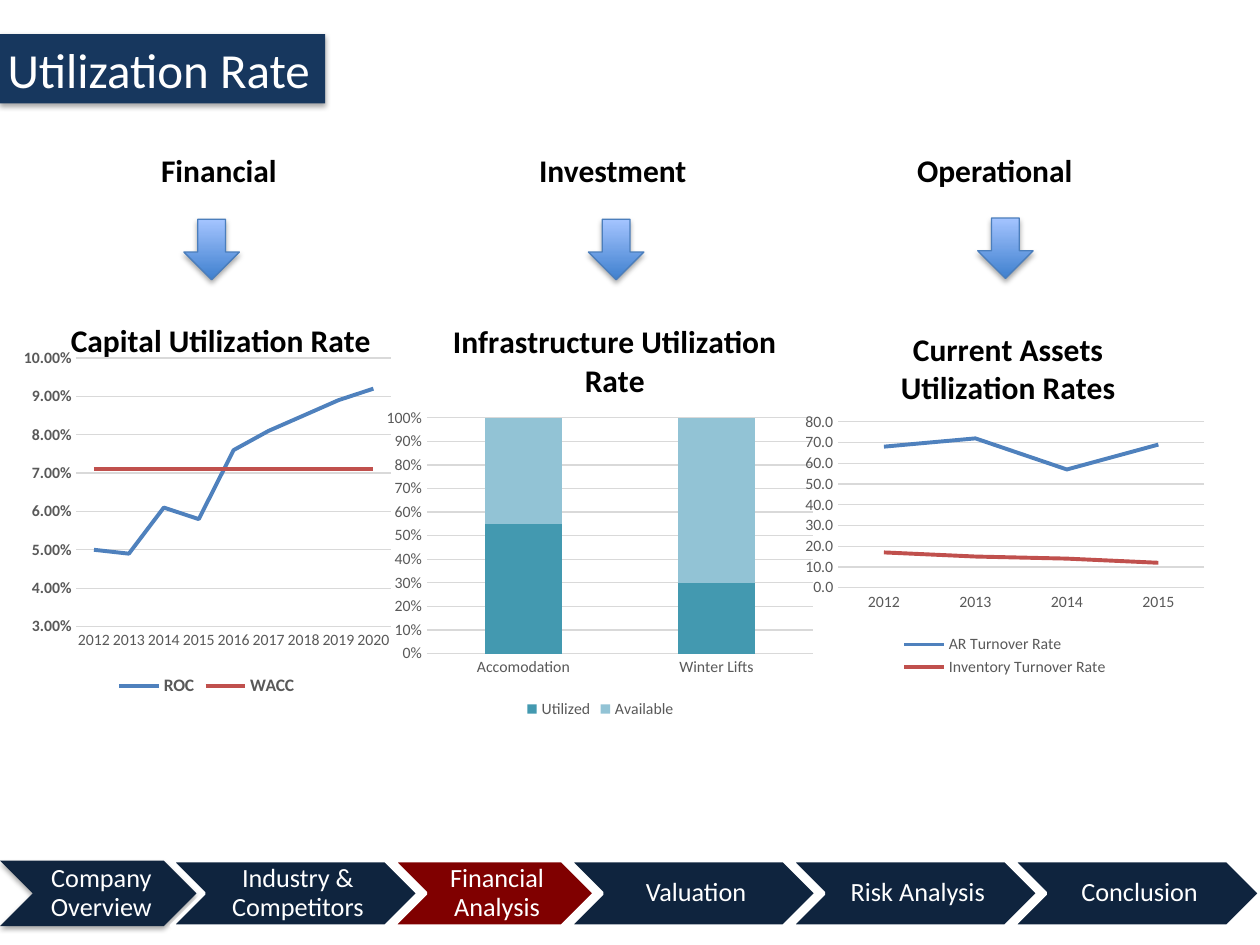
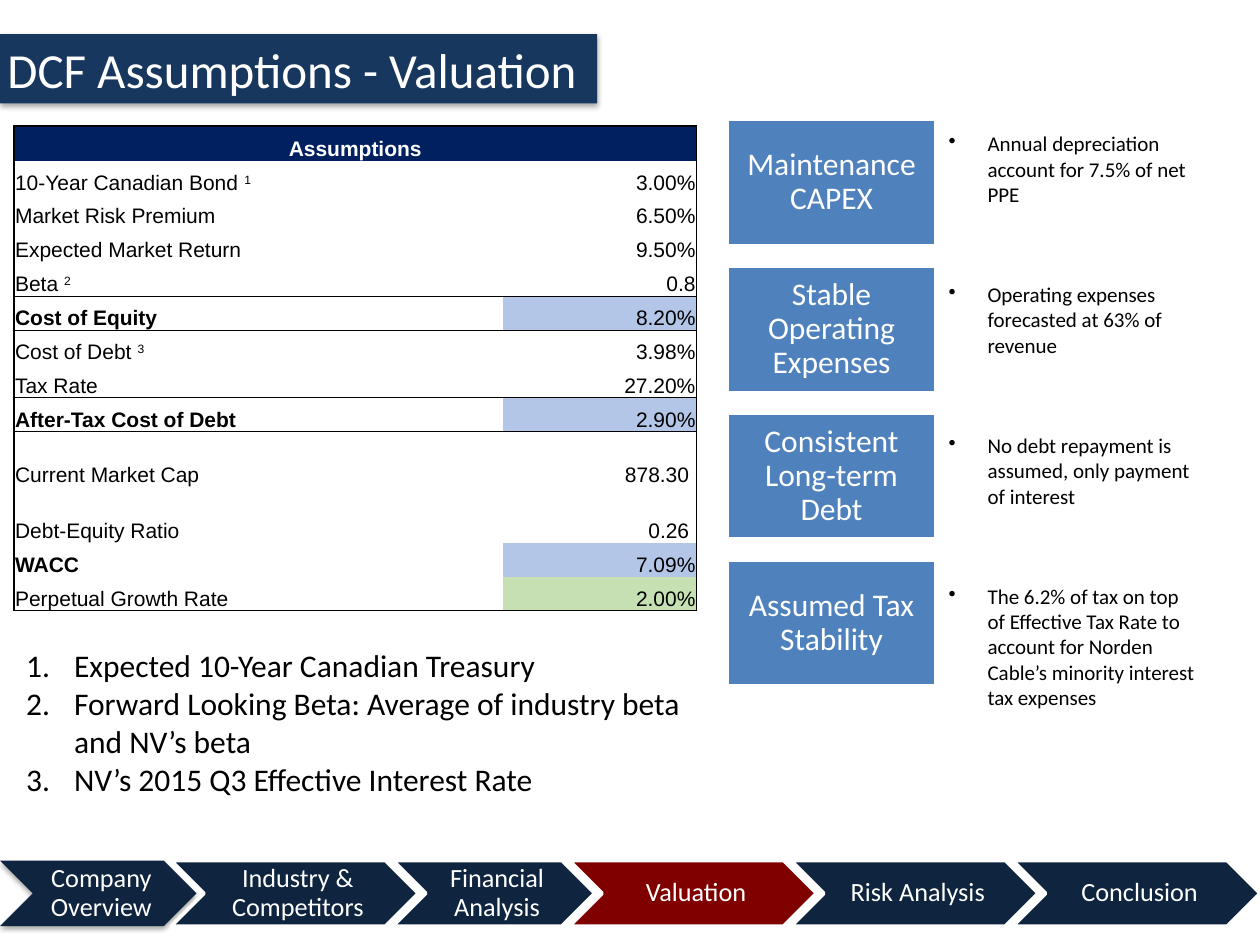
from dataclasses import dataclass

from lxml import etree
from pptx import Presentation
from pptx.chart.data import CategoryChartData
from pptx.dml.color import RGBColor
from pptx.enum.chart import XL_CHART_TYPE, XL_LEGEND_POSITION, XL_TICK_MARK
from pptx.enum.shapes import MSO_SHAPE
from pptx.enum.text import MSO_ANCHOR, PP_ALIGN
from pptx.oxml import parse_xml
from pptx.oxml.ns import nsdecls, qn
from pptx.util import Inches, Pt

LINE, STACKED = XL_CHART_TYPE.LINE, XL_CHART_TYPE.COLUMN_STACKED
BOTTOM, NO_TICK = XL_LEGEND_POSITION.BOTTOM, XL_TICK_MARK.NONE
RECT, CHEVRON, DOWN_ARROW = MSO_SHAPE.RECTANGLE, MSO_SHAPE.CHEVRON, MSO_SHAPE.DOWN_ARROW
MIDDLE, LOW = MSO_ANCHOR.MIDDLE, MSO_ANCHOR.BOTTOM
LEFT, CENTER, RIGHT = PP_ALIGN.LEFT, PP_ALIGN.CENTER, PP_ALIGN.RIGHT
WHITE, BLACK, GREY, GRID = "FFFFFF", "000000", "595959", "D9D9D9"
TITLE_BLUE, NAVY, MAROON, BLUE, RED = "17375E", "0F243E", "800000", "4F81BD", "C0504D"
HEADER_BLUE, RESULT_BLUE, GROWTH_GREEN = "002060", "B4C6E7", "C6E0B4"
NO_TABLE_STYLE = "{2D5ABB26-0587-4C30-8999-92F81FD0307C}"
STEPS = [("Company Overview", 1.56), ("Industry & Competitors", 1.96),
         ("Financial Analysis", 1.6), ("Valuation", 1.96),
         ("Risk Analysis", 1.96), ("Conclusion", 1.96)]


@dataclass
class Series:
    name: str
    values: list[float]
    color: str


@dataclass
class Panel:
    heading: str
    arrow: tuple[float, float]
    title: str
    title_at: tuple[float, float]
    kind: int
    box: tuple[float, float, float, float]
    plot: tuple[float, float, float, float]
    categories: list[str]
    series: list[Series]
    scale: tuple[float, float, float]
    number_format: str
    bold: bool = False
    legend_size: int = 9
    legend_at: tuple[float, ...] = ()


@dataclass
class Assumption:
    label: str
    value: str
    note: str = ""
    height: float = 0.27
    fill: str = WHITE
    bold: bool = False
    ruled: bool = False
    right_inset: float = 0.01


def rgb(color: str) -> RGBColor:
    return RGBColor.from_string(color)


def set_font(font, size: float, color: str, bold: bool = False, name: str = "Calibri") -> None:
    font.name, font.size, font.bold = name, Pt(size), bold
    font.color.rgb = rgb(color)


def set_insets(frame, left: float, top: float, right: float, bottom: float) -> None:
    frame.margin_left, frame.margin_top = Inches(left), Inches(top)
    frame.margin_right, frame.margin_bottom = Inches(right), Inches(bottom)


def add_shape(slide, kind: int, box: tuple, fill: str = "", line: str = "", width: float = 2):
    sp = slide.shapes.add_shape(kind, *map(Inches, box))
    sp.shadow.inherit = False
    if fill:
        sp.fill.solid()
        sp.fill.fore_color.rgb = rgb(fill)
    if line:
        sp.line.color.rgb = rgb(line)
        sp.line.width = Pt(width)
    else:
        sp.line.fill.background()
    return sp


def cast_shadow(sp) -> None:
    effects = sp._element.spPr.find(qn("a:effectLst"))
    effects.append(parse_xml(
        f'<a:outerShdw {nsdecls("a")} blurRad="{Pt(3.1)}" dist="{Pt(1.8)}" dir="5400000" '
        'rotWithShape="0"><a:srgbClr val="000000"><a:alpha val="35000"/></a:srgbClr></a:outerShdw>'))


def label_shape(sp, text: str, size: float, insets: tuple) -> None:
    tf = sp.text_frame
    tf.word_wrap, tf.vertical_anchor = True, MIDDLE
    set_insets(tf, *insets)
    p = tf.paragraphs[0]
    p.text, p.alignment, p.line_spacing = text, CENTER, 0.9
    set_font(p.font, size, WHITE)


def add_text(slide, box: tuple, lines: list[str], size: float, bold: bool = False,
             bullet: str = "", indent: float = 0, gap: float = 0) -> None:
    tf = slide.shapes.add_textbox(*map(Inches, box)).text_frame
    tf.word_wrap = True
    for i, line in enumerate(lines):
        p = tf.add_paragraph() if i else tf.paragraphs[0]
        p.text, p.space_after = line, Pt(gap)
        set_font(p.font, size, BLACK, bold)
        if bullet:
            pPr = p._p.get_or_add_pPr()
            pPr.set("marL", str(Inches(indent)))
            pPr.set("indent", str(-Inches(indent)))
            mark = parse_xml(f'<a:{bullet} {nsdecls("a")}/>')
            mark.set(*(("char", "•") if bullet == "buChar" else ("type", "arabicPeriod")))
            pPr.insert_element_before(mark, "a:tabLst", "a:defRPr", "a:extLst")


def add_frame(prs, title: str, title_width: float, active: str):
    slide = prs.slides.add_slide(prs.slide_layouts[6])
    bar = add_shape(slide, RECT, (0, 0.27, title_width, 0.55), TITLE_BLUE)
    cast_shadow(bar)
    tf = bar.text_frame
    tf.word_wrap, tf.vertical_anchor = False, MIDDLE
    set_insets(tf, 0.06, 0, 0, 0)
    p = tf.paragraphs[0]
    p.text, p.alignment = title, LEFT
    set_font(p.font, 28, WHITE)
    left = 0.0
    for i, (name, width) in enumerate(STEPS):
        sp = add_shape(slide, CHEVRON, (left, 6.83, width, 0.52),
                       MAROON if name == active else NAVY, WHITE if i else "")
        if not i:
            cast_shadow(sp)
        label_shape(sp, name, 15, (0.07, 0.02, 0.02, 0.02))
        left += width - 0.2
    return slide


def place(element, after: str, position: tuple, inner: bool = False) -> None:
    for old in element.findall(qn("c:layout")):
        element.remove(old)
    layout = parse_xml(f'<c:layout {nsdecls("c")}><c:manualLayout/></c:layout>')
    settings = [("layoutTarget", "inner")] if inner else []
    settings += [("xMode", "edge"), ("yMode", "edge")] + list(zip("xywh", position))
    for tag, value in settings:
        etree.SubElement(layout[0], qn(f"c:{tag}")).set("val", str(value))
    if after:
        element.find(qn(after)).addnext(layout)
    else:
        element.insert(0, layout)


def add_panel_chart(slide, panel: Panel) -> None:
    data = CategoryChartData(number_format=panel.number_format)
    data.categories = panel.categories
    for s in panel.series:
        data.add_series(s.name, s.values)
    chart = slide.shapes.add_chart(panel.kind, *map(Inches, panel.box), data).chart
    set_font(chart.font, 10, BLACK)
    chart.has_title = True
    tf = chart.chart_title.text_frame
    tf.text = panel.title
    for p in tf.paragraphs:
        set_font(p.font, 18, BLACK, True)
    place(chart.chart_title._element, "c:tx", panel.title_at)
    place(chart._chartSpace.chart.plotArea, "", panel.plot, True)
    chart.has_legend = True
    legend = chart.legend
    legend.position, legend.include_in_layout = BOTTOM, False
    set_font(legend.font, panel.legend_size, GREY, panel.bold)
    if panel.legend_at:
        place(legend._element, "c:legendPos", panel.legend_at)
    cat, val = chart.category_axis, chart.value_axis
    for axis in (cat, val):
        axis.major_tick_mark = axis.minor_tick_mark = NO_TICK
    set_font(cat.tick_labels.font, 9, GREY)
    set_font(val.tick_labels.font, 9, GREY, panel.bold)
    val.minimum_scale, val.maximum_scale, val.major_unit = panel.scale
    val.tick_labels.number_format = panel.number_format
    val.tick_labels.number_format_is_linked = False
    val.format.line.fill.background()
    for line in (cat.format.line, val.major_gridlines.format.line):
        line.color.rgb, line.width = rgb(GRID), Pt(0.75)
    plot = chart.plots[0]
    plot.vary_by_categories = False
    if panel.kind == STACKED:
        plot.gap_width, plot.overlap = 150, 100
    for ser, s in zip(plot.series, panel.series):
        if panel.kind == STACKED:
            ser.format.fill.solid()
            ser.format.fill.fore_color.rgb = rgb(s.color)
        else:
            ser.smooth = False
            ser.format.line.color.rgb, ser.format.line.width = rgb(s.color), Pt(2.25)


def add_panel(slide, index: int, panel: Panel) -> None:
    add_text(slide, (1.18 + 3 * index, 1.15, 2.02, 0.4), [panel.heading], 18, True)
    arrow = add_shape(slide, DOWN_ARROW, (*panel.arrow, 0.44, 0.48), line="4B7EBC", width=0.75)
    arrow.fill.gradient()
    arrow.fill.gradient_angle = 90
    for stop, color in zip(arrow.fill.gradient_stops, ("3F80CE", "A4C4FF")):
        stop.color.rgb = rgb(color)
    cast_shadow(arrow)
    add_panel_chart(slide, panel)


def style_cell(cell, text: str, fill: str, align: int, borders: dict[str, float], color: str = BLACK,
               bold: bool = False, note: str = "", right_inset: float = 0.01) -> None:
    tcPr = cell._tc.get_or_add_tcPr()
    for side in "LRTB":
        if side in borders:
            tcPr.append(parse_xml(
                f'<a:ln{side} {nsdecls("a")} w="{Pt(borders[side])}"><a:solidFill>'
                f'<a:srgbClr val="{BLACK}"/></a:solidFill></a:ln{side}>'))
    cell.fill.solid()
    cell.fill.fore_color.rgb = rgb(fill)
    cell.vertical_anchor = LOW
    set_insets(cell, 0.01, 0.01, right_inset, 0)
    p = cell.text_frame.paragraphs[0]
    p.text, p.alignment = text, align
    set_font(p.font, 12, color, bold, "Arial")
    if note:
        r = p.add_run()
        r.text = note
        r._r.get_or_add_rPr().set("baseline", "30000")


def add_assumptions(slide, rows: list[Assumption]) -> None:
    table = slide.shapes.add_table(len(rows) + 1, 2, *map(Inches, (0.11, 1, 5.42, 3.86))).table
    table._tbl.tblPr.find(qn("a:tableStyleId")).text = NO_TABLE_STYLE
    table.first_row = table.horz_banding = False
    for column, width in zip(table.columns, (3.88, 1.54)):
        column.width = Inches(width)
    table.rows[0].height = Inches(0.28)
    table.cell(0, 0).merge(table.cell(0, 1))
    for c, text in enumerate(("Assumptions", "")):
        style_cell(table.cell(0, c), text, HEADER_BLUE, CENTER,
                   {"L": 1, "R": 1, "T": 1}, WHITE, True)
    for i, row in enumerate(rows, 1):
        table.rows[i].height = Inches(row.height)
        edges = {"B": 1} if i == len(rows) else {"B": 0.5} if row.ruled else {}
        if i > 1 and rows[i - 2].ruled:
            edges["T"] = 0.5
        style_cell(table.cell(i, 0), row.label, WHITE, LEFT, {"L": 1, **edges},
                   bold=row.bold, note=row.note)
        style_cell(table.cell(i, 1), row.value, row.fill, RIGHT, {"R": 1, **edges},
                   right_inset=row.right_inset)


PANELS = [
    Panel("Financial", (1.46, 1.74), "Capital Utilization Rate", (0.14, 0.05), LINE,
          (0.08, 2.32, 3.12, 3.24), (0.169, 0.161, 0.8, 0.658),
          [str(year) for year in range(2012, 2021)],
          [Series("ROC", [0.05, 0.049, 0.061, 0.058, 0.076, 0.081, 0.085, 0.089, 0.092], BLUE),
           Series("WACC", [0.071] * 9, RED)],
          (0.03, 0.1, 0.01), "0.00%", True, 10),
    Panel("Investment", (4.67, 1.74), "Infrastructure Utilization\nRate", (0.16, 0.05), STACKED,
          (3, 2.35, 3.53, 3.39), (0.11, 0.285, 0.868, 0.552), ["Accomodation", "Winter Lifts"],
          [Series("Utilized", [0.55, 0.3], "4399B0"), Series("Available", [0.45, 0.7], "92C3D5")],
          (0, 1, 0.1), "0%"),
    Panel("Operational", (7.76, 1.73), "Current Assets\nUtilization Rates", (0.24, 0.06), LINE,
          (6.33, 2.4, 3.29, 3), (0.098, 0.316, 0.883, 0.439),
          [str(year) for year in range(2012, 2016)],
          [Series("AR Turnover Rate", [68, 72, 57, 69], BLUE),
           Series("Inventory Turnover Rate", [17, 15, 14, 12], RED)],
          (0, 80, 10), "#,##0.0", legend_at=(0.24, 0.87, 0.52, 0.13)),
]
ASSUMPTIONS = [
    Assumption("10-Year Canadian Bond ", "3.00%", "1"),
    Assumption("Market Risk Premium", "6.50%", height=0.26),
    Assumption("Expected Market Return", "9.50%"),
    Assumption("Beta ", "0.8", "2", ruled=True),
    Assumption("Cost of Equity", "8.20%", fill=RESULT_BLUE, bold=True),
    Assumption("Cost of Debt ", "3.98%", "3"),
    Assumption("Tax Rate", "27.20%", ruled=True),
    Assumption("After-Tax Cost of Debt", "2.90%", fill=RESULT_BLUE, bold=True),
    Assumption("Current Market Cap", "878.30", height=0.44, right_inset=0.06),
    Assumption("Debt-Equity Ratio", "0.26", height=0.44, right_inset=0.06),
    Assumption("WACC", "7.09%", fill=RESULT_BLUE, bold=True),
    Assumption("Perpetual Growth Rate", "2.00%", fill=GROWTH_GREEN),
]
FOOTNOTES = ["Expected 10-Year Canadian Treasury",
             "Forward Looking Beta: Average of industry beta and NV’s beta",
             "NV’s 2015 Q3 Effective Interest Rate"]
DRIVERS = {
    "Maintenance CAPEX": "Annual depreciation account for 7.5% of net PPE",
    "Stable Operating Expenses": "Operating expenses forecasted at 63% of revenue",
    "Consistent Long-term Debt": "No debt repayment is assumed, only payment of interest",
    "Assumed Tax Stability": "The 6.2% of tax on top of Effective Tax Rate to account for "
                             "Norden Cable’s minority interest tax expenses",
}


def main() -> None:
    prs = Presentation()
    prs.slide_width, prs.slide_height = Inches(10), Inches(7.5)

    slide = add_frame(prs, "Utilization Rate", 2.58, "Financial Analysis")
    for i, panel in enumerate(PANELS):
        add_panel(slide, i, panel)

    slide = add_frame(prs, "DCF Assumptions - Valuation", 4.74, "Valuation")
    add_assumptions(slide, ASSUMPTIONS)
    add_text(slide, (0.11, 5.08, 5.42, 1.31), FOOTNOTES, 18, bullet="buAutoNum", indent=0.38)
    for i, driver in enumerate(DRIVERS):
        sp = add_shape(slide, RECT, (5.77, 0.95 + 1.165 * i, 1.66, 1), BLUE, WHITE)
        label_shape(sp, driver, 18, (0.07,) * 4)
    add_text(slide, (7.43, 0.99, 2.16, 4.75), list(DRIVERS.values()), 12,
             bullet="buChar", indent=0.31, gap=43)
    prs.save("out.pptx")


if __name__ == "__main__":
    main()
